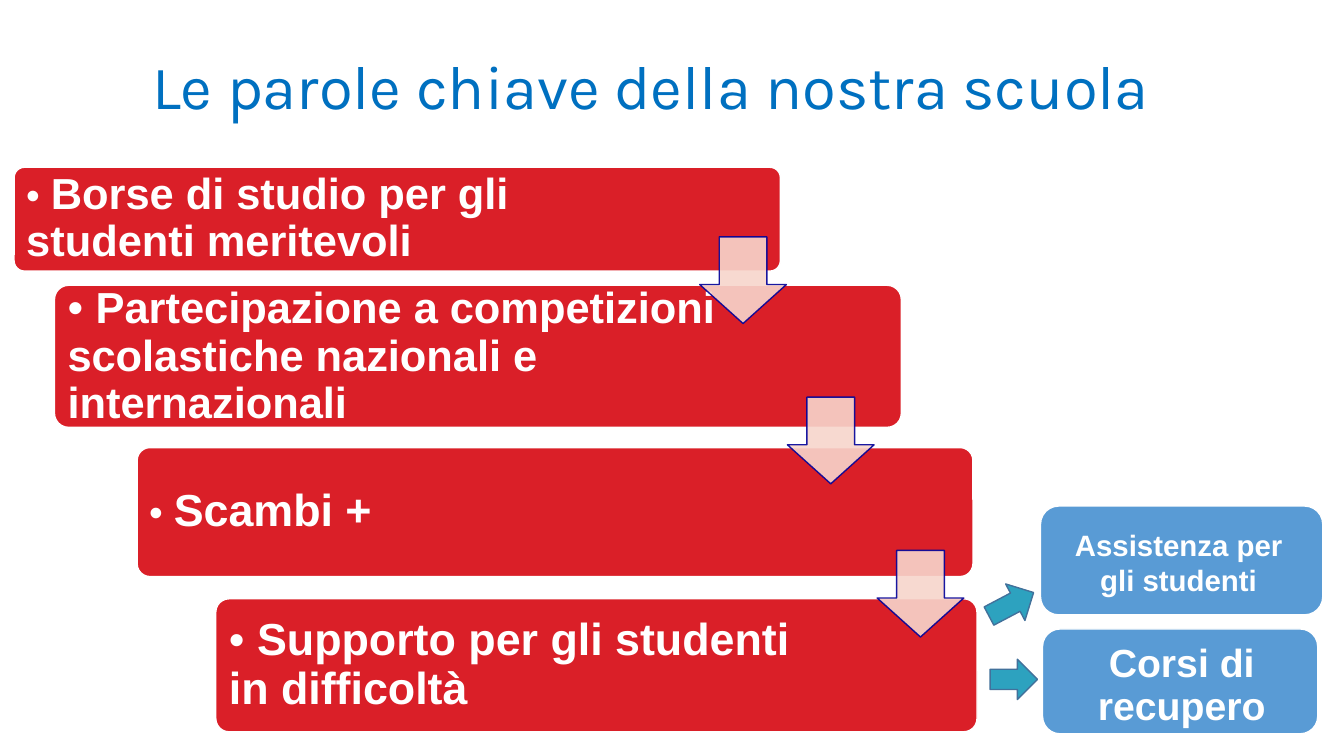
import pptx
import pptx.dml.color
import pptx.enum.shapes
import pptx.enum.text
import pptx.oxml
import pptx.oxml.ns
import pptx.util

Inches = pptx.util.Inches
Pt = pptx.util.Pt
SHAPES = pptx.enum.shapes.MSO_SHAPE
ALIGN = pptx.enum.text.PP_ALIGN

COLORS = {
    "title": "0070C0",
    "keyword": "DA1F28",
    "support": "599BD5",
    "white": "FFFFFF",
    "step": "F7D5CB",
    "step_line": "000099",
    "branch": "2DA2BF",
    "branch_line": "42719B",
}


class SlideBuilder:
    def __init__(self, slide, font="Arial"):
        self.slide = slide
        self.font = font

    def color(self, name):
        return pptx.dml.color.RGBColor.from_string(COLORS[name])

    def shape(self, kind, box, fill, line, adjustments, rotation=0, opacity=None):
        shape = self.slide.shapes.add_shape(kind, *map(Inches, box))
        shape.shadow.inherit = False
        shape.rotation = rotation
        for index, value in enumerate(adjustments):
            shape.adjustments[index] = value
        shape.fill.solid()
        shape.fill.fore_color.rgb = self.color(fill)
        shape.line.color.rgb = self.color(line)
        shape.line.width = Pt(1)
        if opacity is not None:
            for rgb in shape.fill._xPr.iter(pptx.oxml.ns.qn("a:srgbClr")):
                alpha = pptx.oxml.parse_xml(
                    f'<a:alpha {pptx.oxml.ns.nsdecls("a")} val="{opacity * 1000}"/>')
                rgb.append(alpha)

    def text(self, box, runs, insets, align=ALIGN.LEFT, color="white",
             font=None, spacing=0.9):
        frame = self.slide.shapes.add_textbox(*map(Inches, box)).text_frame
        frame.word_wrap = True
        frame.vertical_anchor = pptx.enum.text.MSO_ANCHOR.MIDDLE
        frame.margin_left = frame.margin_right = Inches(insets[0])
        frame.margin_top = frame.margin_bottom = Inches(insets[1])
        paragraph = frame.paragraphs[0]
        paragraph.alignment = align
        paragraph.line_spacing = spacing
        paragraph.font.name = font or self.font
        paragraph.font.color.rgb = self.color(color)
        for wording, size, bold in runs:
            run = paragraph.add_run()
            run.text = wording
            run.font.size = Pt(size)
            run.font.bold = bold

    def keyword(self, box, text_width, wording, bullet_size, size, inset):
        left, top, _, height = box
        self.shape(SHAPES.ROUNDED_RECTANGLE, box, "keyword", "white", [0.1])
        self.text((left, top, text_width, height),
                  [("• ", bullet_size, False), (wording, size, True)], (inset, inset))

    def step_arrow(self, left, top):
        self.shape(SHAPES.DOWN_ARROW, (left, top, 0.86, 0.86), "step", "step_line",
                   [0.55, 0.45], opacity=90)

    def branch_arrow(self, box, rotation=0):
        self.shape(SHAPES.RIGHT_ARROW, box, "branch", "branch_line", [0.5, 0.5], rotation)

    def support(self, box, text_box, wording, size, spacing):
        self.shape(SHAPES.ROUNDED_RECTANGLE, box, "support", "white", [0.167])
        self.text(text_box, [(wording, size, True)], (0.12, 0.06), ALIGN.CENTER,
                  spacing=spacing)


def main():
    presentation = pptx.Presentation()
    presentation.slide_width = Inches(13.33)
    presentation.slide_height = Inches(7.5)
    builder = SlideBuilder(presentation.slides.add_slide(presentation.slide_layouts[6]))

    builder.text((1.35, 0.32, 10.22, 1.13),
                 [("Le parole chiave della nostra scuola", 44, False)],
                 (0.1, 0.05), ALIGN.CENTER, "title", "Karla")

    builder.branch_arrow((9.82, 6.54, 0.47, 0.4))
    builder.branch_arrow((9.78, 5.79, 0.5, 0.41), 332.2)

    keywords = [
        ((0.14, 1.66, 7.6, 1.03), 6.12,
         "Borse di studio per gli studenti meritevoli", 28, 31, 0.12),
        ((0.54, 2.83, 8.4, 1.41), 6.74,
         "Partecipazione a competizioni scolastiche nazionali e internazionali", 32, 31, 0.13),
        ((1.36, 4.44, 8.29, 1.28), 6.65, "Scambi +", 28, 32, 0.12),
        ((2.14, 5.94, 7.55, 1.32), 6.06,
         "Supporto per gli studenti in difficoltà", 32, 32, 0.13),
    ]
    for keyword in keywords:
        builder.keyword(*keyword)

    for left, top in [(6.94, 2.35), (7.81, 3.94), (8.7, 5.46)]:
        builder.step_arrow(left, top)

    builder.support((10.32, 5.02, 2.8, 1.08), (10.5, 5.2, 2.38, 0.76),
                    "Assistenza per gli studenti", 21, 1.0)
    builder.support((10.34, 6.24, 2.73, 1.04), (10.4, 6.34, 2.64, 0.94),
                    "Corsi di recupero", 28, 0.9)

    presentation.save("out.pptx")


if __name__ == "__main__":
    main()
